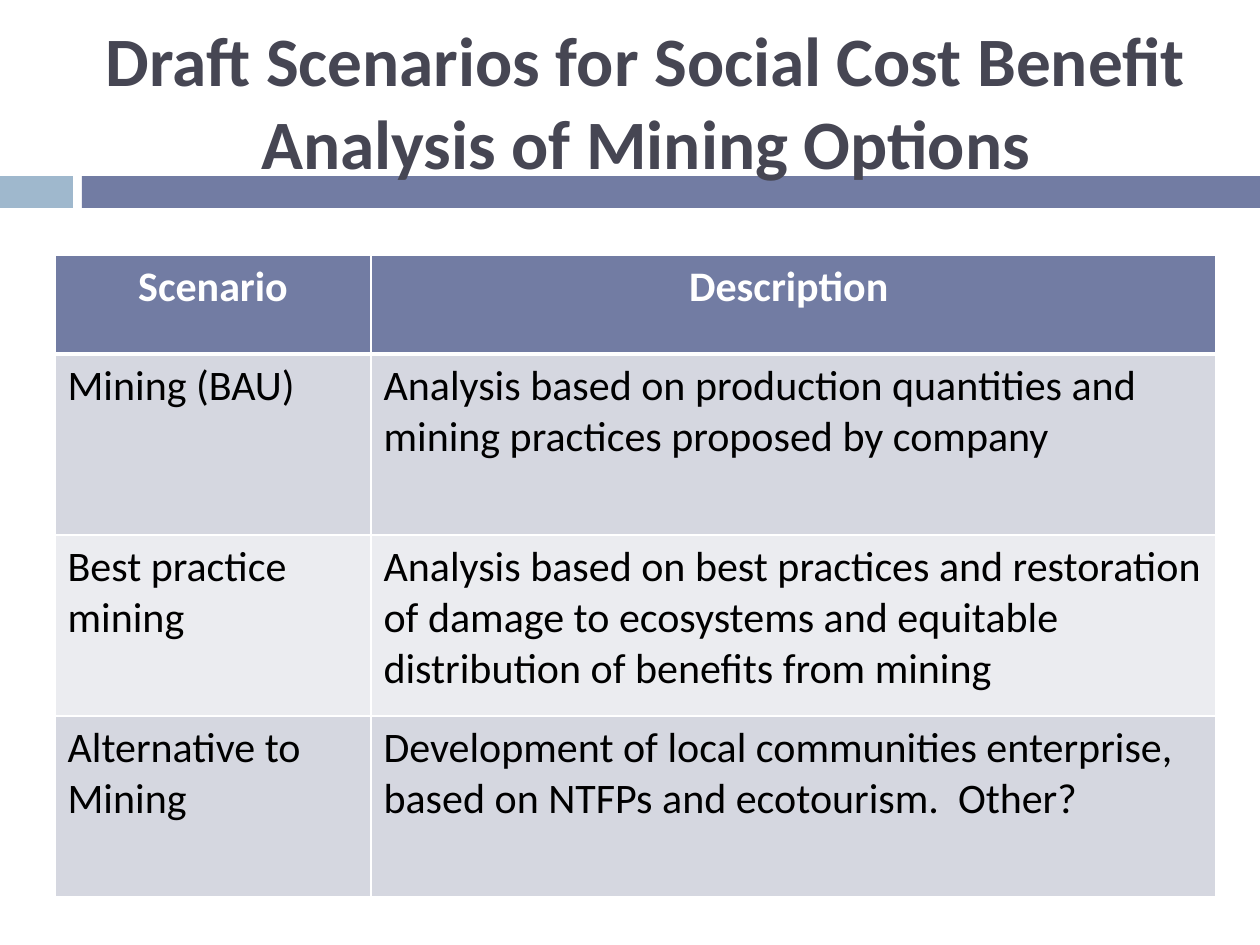
from dataclasses import dataclass

import pptx
import pptx.dml.color
import pptx.enum.shapes
import pptx.enum.text
import pptx.oxml
import pptx.oxml.ns
import pptx.util

PX_PER_INCH = 126
FONT = "Calibri"
COLORS = {
    "title": "464653",
    "accent": "727CA3",
    "light_blue": "9FB8CD",
    "band_dark": "D5D7E0",
    "band_light": "EBECF0",
    "white": "FFFFFF",
    "black": "000000",
}


@dataclass(frozen=True)
class Box:
    left: int
    top: int
    width: int
    height: int


@dataclass(frozen=True)
class Bar:
    box: Box
    color: str


@dataclass(frozen=True)
class Row:
    scenario: str
    description: str
    height: int


BARS = [
    Bar(Box(0, 176, 73, 32), "light_blue"),
    Bar(Box(82, 176, 1178, 32), "accent"),
]
TITLE = "Draft Scenarios for Social Cost Benefit Analysis of Mining Options"
TITLE_BOX = Box(84, 32, 1124, 136)
TABLE_LEFT, TABLE_TOP = 55, 255
COLUMN_WIDTHS = (316, 845)
ROWS = [
    Row("Scenario", "Description ", 99),
    Row("Mining (BAU)",
        "Analysis based on production quantities and mining practices "
        "proposed by company", 181),
    Row("Best practice mining",
        "Analysis based on best practices and restoration of damage to "
        "ecosystems and equitable distribution of benefits from mining", 181),
    Row("Alternative to Mining",
        "Development of local communities enterprise, based on NTFPs and "
        "ecotourism.  Other?", 181),
]


def px(n: int) -> int:
    return pptx.util.Emu(round(n * 914400 / PX_PER_INCH))


def rgb(name: str):
    return pptx.dml.color.RGBColor.from_string(COLORS[name])


def place(s, box: Box) -> None:
    s.left, s.top = px(box.left), px(box.top)
    s.width, s.height = px(box.width), px(box.height)


def add_text(tf, text: str, size: float, color: str, bold: bool, centered: bool) -> None:
    p = tf.paragraphs[0]
    align = pptx.enum.text.PP_ALIGN
    p.alignment = align.CENTER if centered else align.LEFT
    r = p.add_run()
    r.text = text
    r.font.name = FONT
    r.font.size = pptx.util.Pt(size)
    r.font.bold = bold
    r.font.color.rgb = rgb(color)


def add_bar(slide, bar: Bar) -> None:
    s = slide.shapes.add_shape(pptx.enum.shapes.MSO_SHAPE.RECTANGLE, 0, 0, 0, 0)
    place(s, bar.box)
    s.shadow.inherit = False
    s.fill.solid()
    s.fill.fore_color.rgb = rgb(bar.color)
    s.line.fill.background()


def add_title(slide) -> None:
    s = slide.shapes.title
    place(s, TITLE_BOX)
    tf = s.text_frame
    tf.word_wrap = True
    tf.auto_size = pptx.enum.text.MSO_AUTO_SIZE.NONE
    tf.vertical_anchor = pptx.enum.text.MSO_ANCHOR.MIDDLE
    add_text(tf, TITLE, 39.6, "title", True, True)


def set_borders(cell, top: int, bottom: int) -> None:
    """White borders, widths in points; lines must come before the fill."""
    tc_pr = cell._tc.get_or_add_tcPr()
    widths = {"lnL": 1, "lnR": 1, "lnT": top, "lnB": bottom}
    for i, (side, width) in enumerate(widths.items()):
        tc_pr.insert(i, pptx.oxml.parse_xml(
            f'<a:{side} {pptx.oxml.ns.nsdecls("a")} w="{pptx.util.Pt(width)}">'
            f'<a:solidFill><a:srgbClr val="{COLORS["white"]}"/></a:solidFill>'
            f'</a:{side}>'))


def add_scenario_table(slide) -> None:
    box = Box(TABLE_LEFT, TABLE_TOP, sum(COLUMN_WIDTHS), sum(row.height for row in ROWS))
    s = slide.shapes.add_table(len(ROWS), len(COLUMN_WIDTHS), px(box.left),
                               px(box.top), px(box.width), px(box.height))
    table = s.table
    for column, width in zip(table.columns, COLUMN_WIDTHS):
        column.width = px(width)
    for i, row in enumerate(ROWS):
        table.rows[i].height = px(row.height)
        header = i == 0
        fill = "accent" if header else ("band_dark" if i % 2 else "band_light")
        for j, text in enumerate((row.scenario, row.description)):
            cell = table.cell(i, j)
            cell.fill.solid()
            cell.fill.fore_color.rgb = rgb(fill)
            # The header is set off by a thicker rule
            set_borders(cell, top=3 if i == 1 else 1, bottom=3 if header else 1)
            add_text(cell.text_frame, text, 24, "white" if header else "black",
                     header, header)


def main() -> None:
    prs = pptx.Presentation()
    prs.slide_width, prs.slide_height = px(1260), px(945)
    slide = prs.slides.add_slide(prs.slide_layouts[5])

    # Bars go behind the title
    for bar in BARS:
        add_bar(slide, bar)
    title = slide.shapes.title
    slide.shapes._spTree.append(title._element)
    add_title(slide)

    # Scenarios
    add_scenario_table(slide)
    prs.save("out.pptx")


if __name__ == "__main__":
    main()
